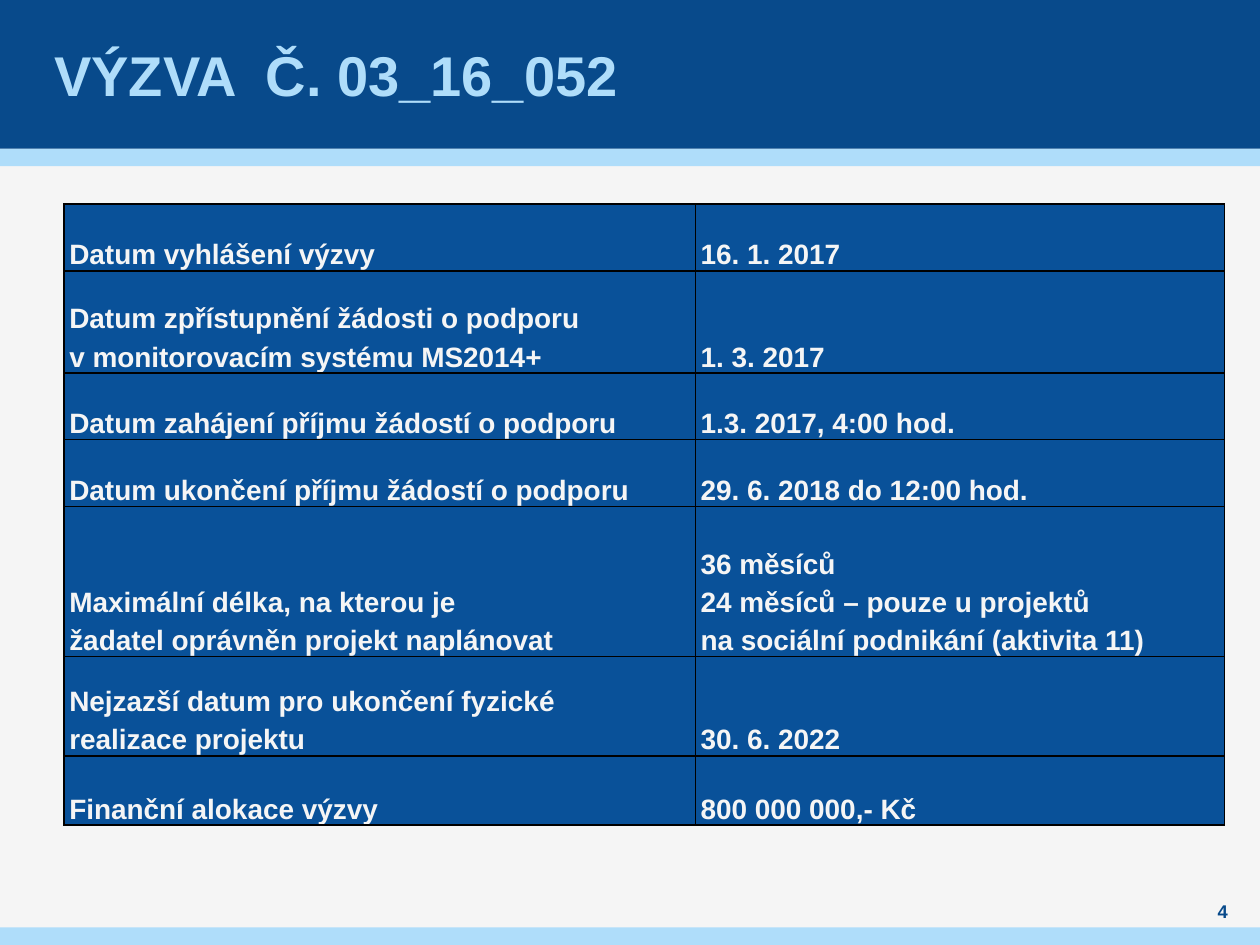
import pptx
import pptx.dml.color
import pptx.enum.shapes
import pptx.enum.text
import pptx.oxml
import pptx.oxml.ns
import pptx.util
from pptx.util import Inches

COLORS = {
    "background": "F5F5F5",
    "header": "084A8B",
    "accent": "AFDDFA",
    "cell": "095199",
    "border": "000000",
}
COLUMN_WIDTHS = [5.01, 4.2]
ROW_HEIGHTS = [0.53, 0.81, 0.53, 0.53, 1.19, 0.79, 0.55]
CALL_DETAILS = [
    ("Datum vyhlášení výzvy", "16. 1. 2017"),
    ("Datum zpřístupnění žádosti o podporu\nv monitorovacím systému MS2014+", "1. 3. 2017"),
    ("Datum zahájení příjmu žádostí o podporu", "1.3. 2017, 4:00 hod."),
    ("Datum ukončení příjmu žádostí o podporu", "29. 6. 2018 do 12:00 hod."),
    (
        "Maximální délka, na kterou je\nžadatel oprávněn projekt naplánovat",
        "36 měsíců\n24 měsíců – pouze u projektů\nna sociální podnikání (aktivita 11)",
    ),
    ("Nejzazší datum pro ukončení fyzické\nrealizace projektu", "30. 6. 2022"),
    ("Finanční alokace výzvy", "800 000 000,- Kč"),
]


def rgb(name):
    """Return the named colour."""
    return pptx.dml.color.RGBColor.from_string(COLORS[name])


def format_paragraph(paragraph, size, color, alignment):
    """Set bold Arial, colour and alignment on a paragraph."""
    paragraph.alignment = alignment
    paragraph.font.name = "Arial"
    paragraph.font.size = pptx.util.Pt(size)
    paragraph.font.bold = True
    paragraph.font.color.rgb = rgb(color)


def set_margins(target, horizontal=0):
    """Set the side margins and remove the top and bottom ones."""
    target.margin_left = target.margin_right = Inches(horizontal)
    target.margin_top = target.margin_bottom = 0


def add_bar(slide, left, top, width, height, color):
    """Add a plain filled rectangle."""
    bar = slide.shapes.add_shape(
        pptx.enum.shapes.MSO_SHAPE.RECTANGLE,
        Inches(left), Inches(top), Inches(width), Inches(height),
    )
    bar.shadow.inherit = False
    bar.fill.solid()
    bar.fill.fore_color.rgb = rgb(color)
    bar.line.fill.background()


def add_header(slide, left, top, width, height):
    """Add the header band, its accent strip and the title."""
    add_bar(slide, left, top + height, width, 0.14, "accent")
    add_bar(slide, left, top, width, height, "header")
    title = slide.shapes.title
    title.left, title.top = Inches(left + 0.39), Inches(top)
    title.width, title.height = Inches(width - 0.79), Inches(height)
    title.element.getparent().append(title.element)
    text_frame = title.text_frame
    text_frame.text = "VÝZVA  Č. 03_16_052"
    text_frame.auto_size = pptx.enum.text.MSO_AUTO_SIZE.NONE
    text_frame.vertical_anchor = pptx.enum.text.MSO_ANCHOR.MIDDLE
    set_margins(text_frame, 0.04)
    format_paragraph(text_frame.paragraphs[0], 32, "accent", pptx.enum.text.PP_ALIGN.LEFT)


def add_borders(cell):
    """Draw a thin line on each side of a cell."""
    properties = cell._tc.get_or_add_tcPr()
    for position, side in enumerate(("lnL", "lnR", "lnT", "lnB")):
        line = pptx.oxml.parse_xml(
            f'<a:{side} {pptx.oxml.ns.nsdecls("a")} w="{pptx.util.Pt(1)}"><a:solidFill>'
            f'<a:srgbClr val="{COLORS["border"]}"/></a:solidFill></a:{side}>'
        )
        properties.insert(position, line)


def fill_cell(cell, text):
    """Write and format one table cell."""
    cell.text = text
    cell.vertical_anchor = pptx.enum.text.MSO_ANCHOR.BOTTOM
    set_margins(cell)
    cell.fill.solid()
    cell.fill.fore_color.rgb = rgb("cell")
    add_borders(cell)
    for paragraph in cell.text_frame.paragraphs:
        format_paragraph(paragraph, 16, "background", pptx.enum.text.PP_ALIGN.JUSTIFY)
        paragraph.space_before = paragraph.space_after = pptx.util.Pt(2)
        paragraph_properties = paragraph._p.get_or_add_pPr()
        paragraph_properties.set("marL", str(Inches(0.04)))
        paragraph_properties.set("indent", "0")


def add_details_table(slide, left, top):
    """Add the table of dates and limits of the call."""
    table = slide.shapes.add_table(
        len(ROW_HEIGHTS), len(COLUMN_WIDTHS), Inches(left), Inches(top),
        Inches(sum(COLUMN_WIDTHS)), Inches(sum(ROW_HEIGHTS)),
    ).table
    table.first_row = table.horz_banding = False
    for column, width in zip(table.columns, COLUMN_WIDTHS):
        column.width = Inches(width)
    for row, height, texts in zip(table.rows, ROW_HEIGHTS, CALL_DETAILS):
        row.height = Inches(height)
        for cell, text in zip(row.cells, texts):
            fill_cell(cell, text)


def add_footer(slide, left, top, width, height):
    """Add the bottom strip and the page number above it."""
    add_bar(slide, left, top, width, height, "accent")
    number = slide.shapes.add_textbox(
        Inches(left + width - 0.55), Inches(top - 0.23), Inches(0.51), Inches(0.2)
    )
    text_frame = number.text_frame
    text_frame.word_wrap = True
    text_frame.vertical_anchor = pptx.enum.text.MSO_ANCHOR.MIDDLE
    set_margins(text_frame)
    text_frame.text = "4"
    format_paragraph(text_frame.paragraphs[0], 10.5, "header", pptx.enum.text.PP_ALIGN.CENTER)


def main():
    """Build and save the slide."""
    presentation = pptx.Presentation()
    presentation.slide_width, presentation.slide_height = Inches(10), Inches(7.5)
    slide = presentation.slides.add_slide(presentation.slide_layouts[5])
    slide.background.fill.solid()
    slide.background.fill.fore_color.rgb = rgb("background")
    add_header(slide, 0, 0, 10, 1.18)
    add_details_table(slide, 0.51, 1.62)
    add_footer(slide, 0, 7.36, 10, 0.14)
    presentation.save("out.pptx")


if __name__ == "__main__":
    main()
